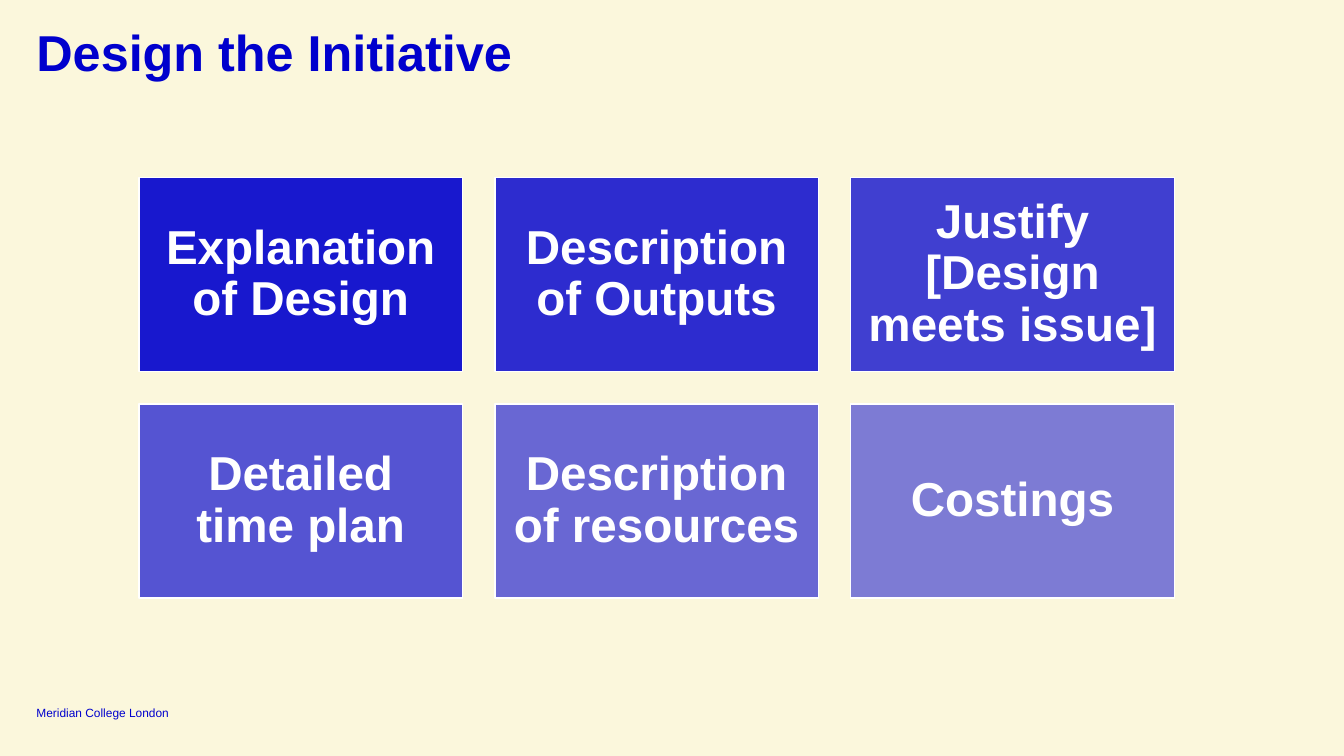
from pptx import Presentation
from pptx import util as u
from pptx.dml.color import RGBColor
from pptx.enum import shapes, text
from pptx.oxml.ns import qn
from lxml import etree

CREAM, BLUE, WHITE = "FBF7DC", "0000CD", "FFFFFF"
STEPS = [
    "Explanation of Design",
    "Description of Outputs",
    "Justify [Design meets issue]",
    "Detailed time plan",
    "Description of resources",
    "Costings",
]
COLUMNS = 3
GAP_SHARE = 0.1
HEIGHT_SHARE = 0.6


def paint(colour_format, colour):
    colour_format.rgb = RGBColor.from_string(colour)


def set_all(target, values):
    for name, value in values.items():
        setattr(target, name, value)


def write(shape, words, size, colour, bold=False, inset=0, spacing=None,
          anchor=text.MSO_ANCHOR.TOP, align=text.PP_ALIGN.LEFT):
    frame = shape.text_frame
    margins = dict.fromkeys(
        ("margin_left", "margin_top", "margin_right", "margin_bottom"), u.Pt(inset))
    set_all(frame, {**margins, "word_wrap": True, "vertical_anchor": anchor})
    paragraph = frame.paragraphs[0]
    set_all(paragraph, {"alignment": align, "line_spacing": spacing})
    run = paragraph.add_run()
    run.text = words
    set_all(run.font, {"name": "Arial", "size": u.Pt(size), "bold": bold})
    paint(run.font.color, colour)


def add_heading(slide, left, top, width, height):
    heading = slide.shapes.add_textbox(*map(u.Pt, (left, top, width, height)))
    write(heading, "Design the Initiative", 36, BLUE, bold=True, spacing=0.9)


def add_footer(slide, left, top, width, height):
    footer = slide.shapes.add_textbox(*map(u.Pt, (left, top, width, height)))
    write(footer, "Meridian College London", 8.5, BLUE, anchor=text.MSO_ANCHOR.BOTTOM)


def add_step(slide, words, opacity, left, top, width, height):
    step = slide.shapes.add_shape(
        shapes.MSO_SHAPE.RECTANGLE, *map(u.Pt, (left, top, width, height)))
    step.shadow.inherit = False
    step.fill.solid()
    paint(step.fill.fore_color, BLUE)
    fill_colour = step.fill._xPr.find(qn("a:solidFill"))[0]
    etree.SubElement(fill_colour, qn("a:alpha"), val=str(opacity * 1000))
    paint(step.line.color, WHITE)
    step.line.width = u.Pt(1)
    write(step, words, 34, WHITE, bold=True, inset=10, spacing=0.9,
          anchor=text.MSO_ANCHOR.MIDDLE, align=text.PP_ALIGN.CENTER)


def add_step_grid(slide, left, top, width):
    step_width = width / (COLUMNS + (COLUMNS - 1) * GAP_SHARE)
    step_height = step_width * HEIGHT_SHARE
    gap = step_width * GAP_SHARE
    for index, words in enumerate(STEPS):
        row, column = divmod(index, COLUMNS)
        add_step(slide, words, 90 - 8 * index,
                 left + column * (step_width + gap),
                 top + row * (step_height + gap),
                 step_width, step_height)


def main():
    deck = Presentation()
    set_all(deck, {"slide_width": u.Pt(960), "slide_height": u.Pt(540)})
    slide = deck.slides.add_slide(deck.slide_layouts[6])
    slide.background.fill.solid()
    paint(slide.background.fill.fore_color, CREAM)
    add_footer(slide, 26, 503.5, 111.5, 10.5)
    add_heading(slide, 26, 20, 908.5, 29.5)
    add_step_grid(slide, 99.3, 126.7, 739.5)
    deck.save("out.pptx")


if __name__ == "__main__":
    main()
